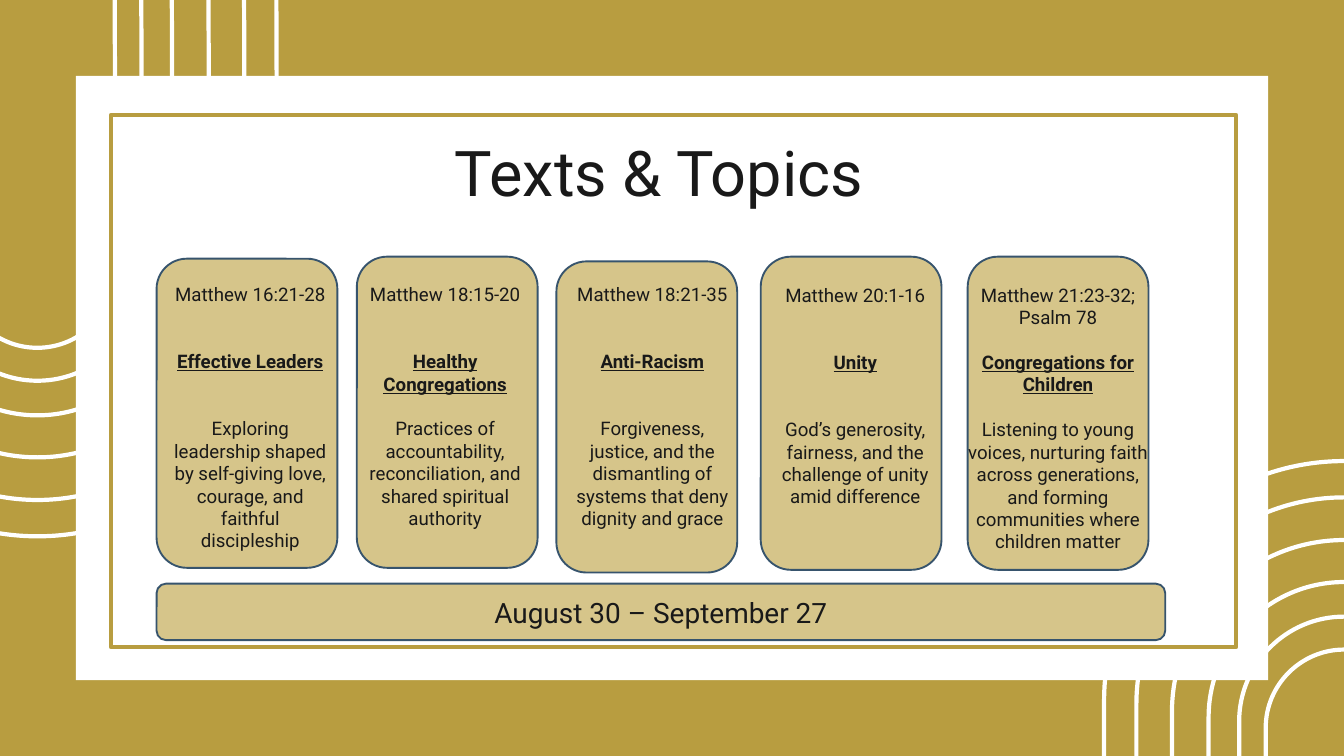
from lxml.etree import SubElement
from pptx import Presentation
from pptx.dml.color import RGBColor
from pptx.enum.shapes import MSO_SHAPE
from pptx.enum.text import MSO_ANCHOR, MSO_AUTO_SIZE, PP_ALIGN
from pptx.oxml.ns import qn
from pptx.util import Inches, Pt

GOLD, SAND, NAVY, INK, WHITE = "B89D40", "D6C58A", "37546D", "191919", "FFFFFF"
rgb = RGBColor.from_string

prs = Presentation()
prs.slide_width, prs.slide_height = Inches(20), Inches(11.25)
U = prs.slide_width // 100  # grid of 100 columns by 56.25 rows
s = prs.slides.add_slide(prs.slide_layouts[5])
s.background.fill.solid()
s.background.fill.fore_color.rgb = rgb(GOLD)


def paint(sp, fill=None, line=None, width=4.5):
    sp.shadow.inherit = False
    if fill:
        sp.fill.solid()
        sp.fill.fore_color.rgb = rgb(fill)
    else:
        sp.fill.background()
    if line:
        sp.line.color.rgb = rgb(line)
        sp.line.width = Pt(width)
    else:
        sp.line.fill.background()


def write(tf, text, size=20, bold=False, underline=False, before=0, new=False):
    tf.word_wrap = True
    p = tf.add_paragraph() if new else tf.paragraphs[0]
    p.alignment = PP_ALIGN.CENTER
    if before:
        p.space_before = Pt(before)
    r = p.add_run()
    r.text = text
    f = r.font
    f.name, f.size, f.bold, f.underline = "Roboto", Pt(size), bold, underline
    f.color.rgb = rgb(INK)


# Nested arches: centre column, centre row, rotation
ARCHES = [(35.7, 58.05), (30.9, 52.65), (25.6, 46.3),
          (20.15, 40.05), (15.6, 34.9), (11.65, 30)]  # width, height
BEND = 0.55  # control length of a quarter circle, as a share of its radius
for cx, cy, turn in [(2.75, 10.88, 359.8), (100, 63.33, 180)]:
    for w, h in ARCHES:
        right, tall = round(w * 100), round(h * 100)
        mid = right // 2
        spring = tall - mid
        fb = s.shapes.build_freeform(right, 0, scale=U / 100)
        fb.add_line_segments([(right, spring), (mid, tall), (0, spring), (0, 0)])
        sp = fb.convert_to_shape(round((cx - w / 2) * U), round((cy - h / 2) * U))
        sp.rotation = turn
        paint(sp, line=WHITE)

        # The two segments at the foot become quarter circles
        low, near, far = (round(v) for v in (spring + BEND * mid,
                                             mid * (1 - BEND), mid * (1 + BEND)))
        quarters = [[(right, low), (far, tall), (mid, tall)],
                    [(near, tall), (0, low), (0, spring)]]
        lines = list(sp.element.iter(qn("a:lnTo")))
        for segment, points in zip(lines[1:3], quarters):
            segment.remove(segment[0])
            curve = SubElement(segment.getparent(), qn("a:cubicBezTo"))
            for x, y in points:
                SubElement(curve, qn("a:pt"), x=str(x), y=str(y))
            segment.getparent().replace(segment, curve)

# White panel and its gold frame
for x, y, w, h, fill, line in [(5.65, 5.65, 88.7, 44.95, WHITE, None),
                               (8.25, 8.55, 83.72, 39.6, None, GOLD)]:
    sp = s.shapes.add_shape(MSO_SHAPE.RECTANGLE, *(round(v * U) for v in (x, y, w, h)))
    paint(sp, fill, line)

# Date bar
sp = s.shapes.add_shape(MSO_SHAPE.ROUNDED_RECTANGLE,
                        *(round(v * U) for v in (11.65, 43.43, 75.05, 4.2)))
paint(sp, SAND, NAVY, 2)
sp.text_frame.vertical_anchor = MSO_ANCHOR.MIDDLE
write(sp.text_frame, "August 30 – September 27", size=30)

# Title, brought in front of the panel
title = s.shapes.title
title.left, title.top, title.width, title.height = (
    round(v * U) for v in (11.35, 9.6, 75.35, 6.25))
title.text_frame.vertical_anchor = MSO_ANCHOR.MIDDLE
write(title.text_frame, "Texts & Topics", size=67.5)
s.shapes.element.append(title.element)

# Topic cards: card (x, y, h), text (x, y, w, h), lines skipped, wording
LINE = 24
cards = [
    ((11.65, 19.25, 23), (12.45, 20.8, 12.35, 19), (2, 2),
     "Matthew 16:21-28", "Effective Leaders",
     "Exploring leadership shaped by self-giving love, courage, and faithful discipleship"),
    ((26.55, 19.1, 23.15), (26.95, 20.8, 12.35, 19), (2, 1),
     "Matthew 18:15-20", "Healthy Congregations",
     "Practices of accountability, reconciliation, and shared spiritual authority"),
    ((41.4, 19.45, 23.15), (42.37, 20.8, 12.35, 19), (2, 2),
     "Matthew 18:21-35", "Anti-Racism",
     "Forgiveness, justice, and the dismantling of systems that deny dignity and grace"),
    ((56.6, 19.1, 23.3), (57.46, 20.86, 12.35, 17.35), (2, 2),
     "Matthew 20:1-16", "Unity",
     "God’s generosity, fairness, and the challenge of unity amid difference"),
    ((72, 19.1, 23.3), (71.47, 20.86, 14.5, 19), (1, 1),
     "Matthew 21:23-32; Psalm 78", "Congregations for Children",
     "Listening to young voices, nurturing faith across generations, "
     "and forming communities where children matter"),
]
for (x, y, h), text_box, (skip1, skip2), reading, topic, summary in cards:
    sp = s.shapes.add_shape(MSO_SHAPE.ROUNDED_RECTANGLE,
                            *(round(v * U) for v in (x, y, 13.45, h)))
    paint(sp, SAND, NAVY, 2)
    tf = s.shapes.add_textbox(*(round(v * U) for v in text_box)).text_frame
    tf.auto_size = MSO_AUTO_SIZE.SHAPE_TO_FIT_TEXT
    write(tf, reading)
    write(tf, topic, bold=True, underline=True, before=skip1 * LINE, new=True)
    write(tf, summary, before=skip2 * LINE, new=True)

prs.save("out.pptx")
